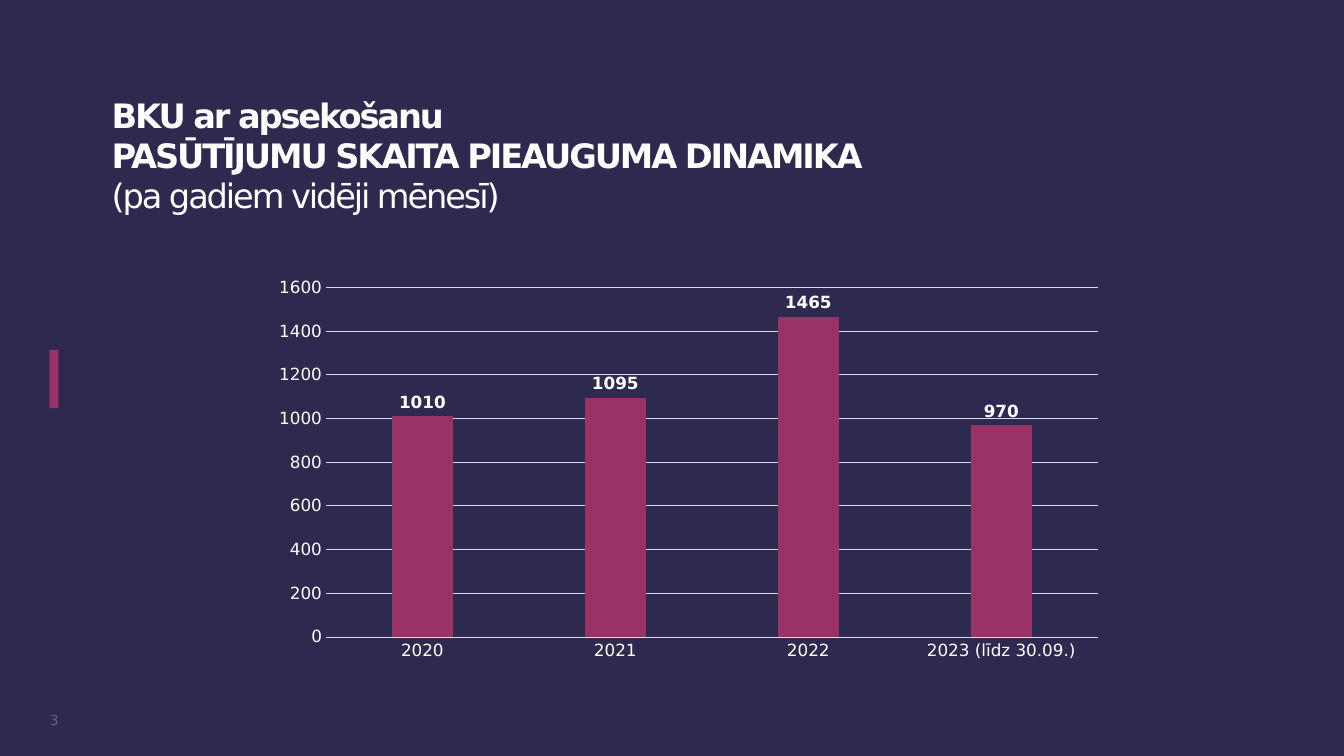
import pptx
import pptx.chart.data
import pptx.dml.color
import pptx.enum.chart
import pptx.enum.shapes
import pptx.enum.text
import pptx.oxml
import pptx.oxml.ns
import pptx.util
from lxml import etree
from pptx.util import Inches

FONT = "DejaVu Sans"
NAVY = "2E294E"
BERRY = "993366"
WHITE = "FFFFFF"
GRID = "DBD9EB"
GREY = "808080"

TITLE_LINES = [
    ("BKU ar apsekošanu", True),
    ("PASŪTĪJUMU SKAITA PIEAUGUMA DINAMIKA", True),
    ("(pa gadiem vidēji mēnesī)", False),
]
ORDERS = {"2020": 1010, "2021": 1095, "2022": 1465, "2023 (līdz 30.09.)": 970}
PLOT_AREA = {"x": 0.098, "y": 0.287, "w": 0.88, "h": 0.574}


def paint(color_format, color):
    color_format.rgb = pptx.dml.color.RGBColor.from_string(color)


def fill_solid(fill, color):
    fill.solid()
    paint(fill.fore_color, color)


def style_font(font, size, color, bold=False):
    font.name = FONT
    font.size = pptx.util.Pt(size)
    font.bold = bold
    paint(font.color, color)


def add_text_box(page, left, top, width, height):
    box = page.shapes.add_textbox(Inches(left), Inches(top), Inches(width), Inches(height))
    box.text_frame.word_wrap = True
    return box.text_frame


def add_title(page):
    frame = add_text_box(page, 1.01, 0.89, 11.46, 1.28)
    for index, (line, bold) in enumerate(TITLE_LINES):
        para = frame.add_paragraph() if index else frame.paragraphs[0]
        span = para.add_run()
        span.text = line
        style_font(span.font, 24, WHITE, bold)
        span._r.get_or_add_rPr().set("spc", "-150")


def add_page_number(page, number):
    frame = add_text_box(page, 0.26, 7.02, 0.56, 0.25)
    frame.margin_left = frame.margin_right = frame.margin_top = frame.margin_bottom = 0
    frame.vertical_anchor = pptx.enum.text.MSO_ANCHOR.MIDDLE
    para = frame.paragraphs[0]
    para.alignment = pptx.enum.text.PP_ALIGN.CENTER
    span = para.add_run()
    span.text = number
    style_font(span.font, 10, GREY)
    color = span._r.rPr.find(".//" + pptx.oxml.ns.qn("a:srgbClr"))
    etree.SubElement(color, pptx.oxml.ns.qn("a:alpha"), val="70000")


def add_accent(page):
    accent = page.shapes.add_shape(
        pptx.enum.shapes.MSO_SHAPE.RECTANGLE,
        Inches(0.49), Inches(3.47), Inches(0.09), Inches(0.58))
    accent.shadow.inherit = False
    fill_solid(accent.fill, BERRY)
    accent.line.fill.background()


def style_line(line):
    paint(line.color, GRID)
    line.width = pptx.util.Pt(0.75)


def style_axis(axis):
    axis.major_tick_mark = pptx.enum.chart.XL_TICK_MARK.NONE
    axis.minor_tick_mark = pptx.enum.chart.XL_TICK_MARK.NONE
    style_font(axis.tick_labels.font, 12, WHITE)


def place_plot(chart):
    plot_area = chart._chartSpace.chart.plotArea
    for old in plot_area.findall(pptx.oxml.ns.qn("c:layout")):
        plot_area.remove(old)
    modes = '<c:layoutTarget val="inner"/><c:xMode val="edge"/><c:yMode val="edge"/>'
    sizes = "".join(f'<c:{key} val="{value}"/>' for key, value in PLOT_AREA.items())
    plot_area.insert(0, pptx.oxml.parse_xml(
        f'<c:layout {pptx.oxml.ns.nsdecls("c")}>'
        f"<c:manualLayout>{modes}{sizes}</c:manualLayout></c:layout>"))


def add_orders_chart(page):
    data = pptx.chart.data.CategoryChartData()
    data.categories = list(ORDERS)
    data.add_series("Series 1", list(ORDERS.values()))
    chart = page.shapes.add_chart(
        pptx.enum.chart.XL_CHART_TYPE.COLUMN_CLUSTERED,
        Inches(2.38), Inches(1.12), Inches(8.7), Inches(6.04), data).chart
    chart.has_title = False
    chart.has_legend = False
    style_font(chart.font, 10, NAVY)
    place_plot(chart)

    style_axis(chart.category_axis)
    style_line(chart.category_axis.format.line)
    style_axis(chart.value_axis)
    chart.value_axis.format.line.fill.background()
    chart.value_axis.minimum_scale = 0
    chart.value_axis.maximum_scale = 1600
    chart.value_axis.major_unit = 200
    style_line(chart.value_axis.major_gridlines.format.line)

    plot = chart.plots[0]
    plot.vary_by_categories = False
    plot.gap_width = 219
    plot.overlap = -27
    series = plot.series[0]
    fill_solid(series.format.fill, BERRY)
    labels = series.data_labels
    labels.show_value = True
    labels.position = pptx.enum.chart.XL_LABEL_POSITION.OUTSIDE_END
    style_font(labels.font, 12, WHITE, bold=True)


def main():
    deck = pptx.Presentation()
    deck.slide_width = Inches(13.33)
    deck.slide_height = Inches(7.5)
    page = deck.slides.add_slide(deck.slide_layouts[6])
    fill_solid(page.background.fill, NAVY)
    add_accent(page)
    add_page_number(page, "3")
    add_title(page)
    add_orders_chart(page)
    deck.save("out.pptx")


if __name__ == "__main__":
    main()
